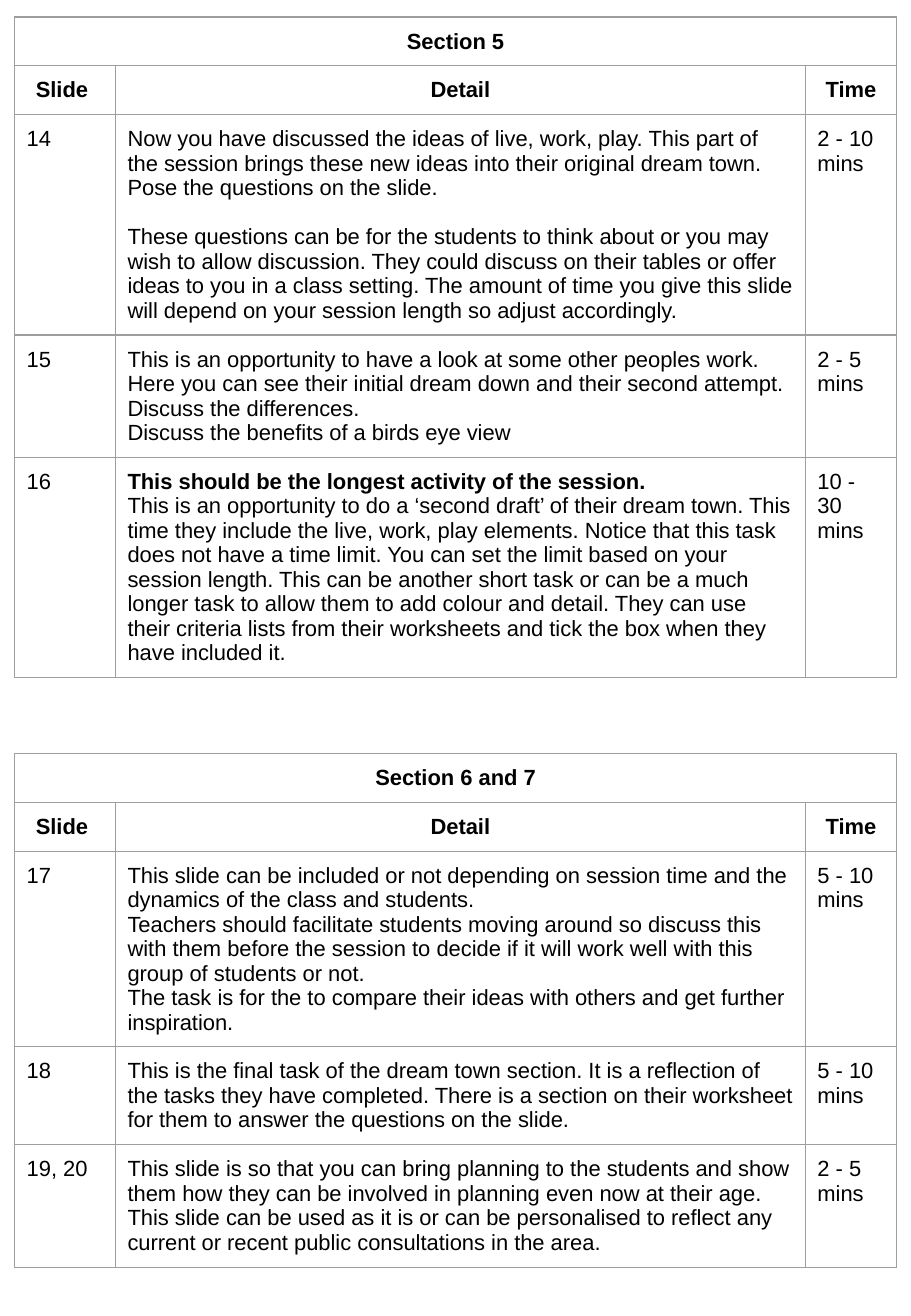
from lxml import etree
from pptx import Presentation
from pptx.dml.color import RGBColor
from pptx.enum.text import PP_ALIGN
from pptx.oxml.ns import qn
from pptx.util import Inches, Pt

LEFT, CENTER = PP_ALIGN.LEFT, PP_ALIGN.CENTER
BLANK = 6
COLS = [0.83, 5.68, 0.75]
HEADS = ["Slide ", "Detail", "Time"]
LINE, PAD = 0.2, 0.1


def color(code):
    return RGBColor.from_string(code)


class Page:
    font = {"name": "Arial", "size": Pt(13)}
    ink, edge, width = "000000", "9E9E9E", Pt(0.75)

    def __init__(self, deck):
        self.slide = deck.slides.add_slide(deck.slide_layouts[BLANK])

    def border(self, cell):
        props = cell._tc.get_or_add_tcPr()
        for i, side in enumerate(("lnL", "lnR", "lnT", "lnB")):
            line = etree.Element(qn(f"a:{side}"), w=str(self.width))
            fill = etree.SubElement(line, qn("a:solidFill"))
            etree.SubElement(fill, qn("a:srgbClr"), val=self.edge)
            props.insert(i, line)

    def label(self, cell, paras, bold=False, align=LEFT, gap=0, lead=False):
        """gap: points between paragraphs; lead: first paragraph is bold."""
        frame = cell.text_frame
        for i, text in enumerate(paras):
            para = frame.add_paragraph() if i else frame.paragraphs[0]
            para.alignment = align
            para.space_before = Pt(gap if i else 0)
            run = para.add_run()
            run.text = text
            run.font.color.rgb = color(self.ink)
            style = {**self.font, "bold": bold or (lead and i == 0)}
            for key, val in style.items():
                setattr(run.font, key, val)

    def table(self, top, title, rows):
        lines = [1, 1] + [row[0] for row in rows]
        highs = [n * LINE + 2 * PAD for n in lines]
        frame = self.slide.shapes.add_table(
            len(highs), len(COLS), Inches(0.12), Inches(top),
            Inches(sum(COLS)), Inches(sum(highs)))
        grid = frame.table
        grid.first_row = grid.horz_banding = False
        for col, wide in zip(grid.columns, COLS):
            col.width = Inches(wide)
        for row, high in zip(grid.rows, highs):
            row.height = Inches(high)
        for cell in grid.iter_cells():
            for side in ("left", "right", "top", "bottom"):
                setattr(cell, f"margin_{side}", Inches(PAD))
            cell.fill.background()
            self.border(cell)

        # Title and column heads
        grid.cell(0, 0).merge(grid.cell(0, len(COLS) - 1))
        self.label(grid.cell(0, 0), [title], bold=True, align=CENTER)
        for c, head in enumerate(HEADS):
            self.label(grid.cell(1, c), [head], bold=True, align=CENTER)

        # Body rows
        for r, (_, num, paras, time, style) in enumerate(rows, 2):
            self.label(grid.cell(r, 0), [num])
            self.label(grid.cell(r, 1), paras, **style)
            self.label(grid.cell(r, 2), [time])


# Each row: line count, slide number, detail paragraphs, time, detail style
FIVE = [
    (8, "14", [
        "Now you have discussed the ideas of live, work, play. This part of "
        "the session brings these new ideas into their original dream town. "
        "Pose the questions on the slide.",
        "These questions can be for the students to think about or you may "
        "wish to allow discussion. They could discuss on their tables or offer "
        "ideas to you in a class setting. The amount of time you give this slide "
        "will depend on your session length so adjust accordingly.",
    ], "2 - 10 mins", {"gap": 14.5}),
    (4, "15", [
        "This is an opportunity to have a look at some other peoples work. "
        "Here you can see their initial dream down and their second attempt.",
        "Discuss the differences.",
        "Discuss the benefits of a birds eye view",
    ], "2 - 5 mins", {}),
    (8, "16", [
        "This should be the longest activity of the session.",
        "This is an opportunity to do a ‘second draft’ of their dream town. This "
        "time they include the live, work, play elements. Notice that this task "
        "does not have a time limit. You can set the limit based on your "
        "session length. This can be another short task or can be a much "
        "longer task to allow them to add colour and detail. They can use "
        "their criteria lists from their worksheets and tick the box when they "
        "have included it.",
    ], "10 - 30 mins", {"lead": True}),
]
SIX = [
    (7, "17", [
        "This slide can be included or not depending on session time and the "
        "dynamics of the class and students.",
        "Teachers should facilitate students moving around so discuss this "
        "with them before the session to decide if it will work well with this "
        "group of students or not.",
        "The task is for the to compare their ideas with others and get further "
        "inspiration.",
    ], "5 - 10 mins", {}),
    (3, "18", [
        "This is the final task of the dream town section. It is a reflection of "
        "the tasks they have completed. There is a section on their worksheet "
        "for them to answer the questions on the slide.",
    ], "5 - 10 mins", {}),
    (4, "19, 20", [
        "This slide is so that you can bring planning to the students and show "
        "them how they can be involved in planning even now at their age.",
        "This slide can be used as it is or can be personalised to reflect any "
        "current or recent public consultations in the area.",
    ], "2 - 5 mins", {}),
]


def main():
    deck = Presentation()
    deck.slide_width, deck.slide_height = Inches(7.5), Inches(10.83)
    page = Page(deck)
    page.table(0.14, "Section 5", FIVE)
    page.table(6.2, "Section 6 and 7", SIX)
    deck.save("out.pptx")


if __name__ == "__main__":
    main()
